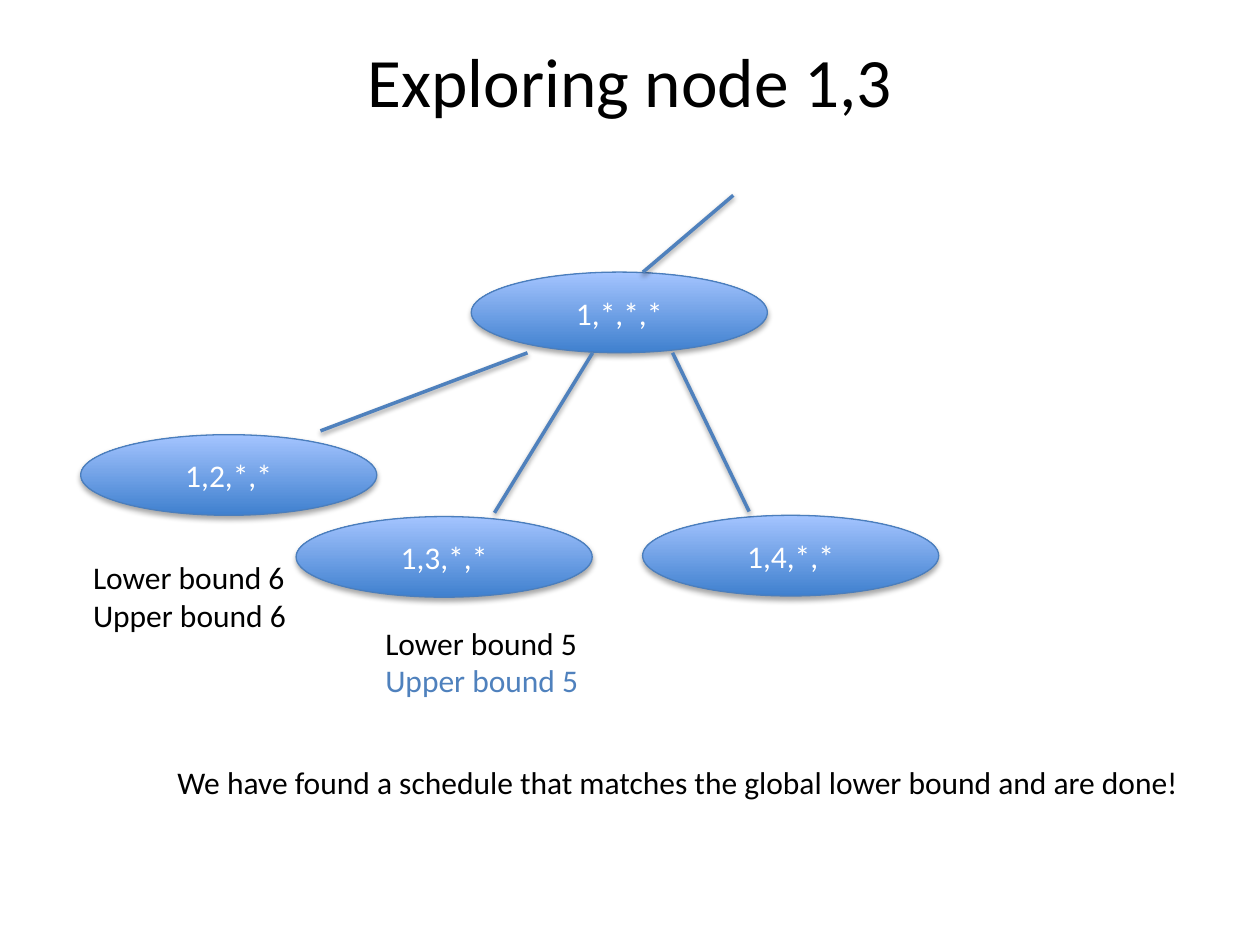
from lxml import etree
from pptx import Presentation
from pptx.dml.color import RGBColor
from pptx.enum.shapes import MSO_CONNECTOR, MSO_SHAPE
from pptx.enum.text import MSO_ANCHOR, PP_ALIGN
from pptx.oxml.ns import qn
from pptx.util import Inches, Pt

STRAIGHT = MSO_CONNECTOR.STRAIGHT
OVAL = MSO_SHAPE.OVAL
TOP, MIDDLE = MSO_ANCHOR.TOP, MSO_ANCHOR.MIDDLE
LEFT, CENTER = PP_ALIGN.LEFT, PP_ALIGN.CENTER

UNIT = 0.1
FONT = "Calibri"
BLACK, WHITE, BLUE = "000000", "FFFFFF", "4F81BD"
NODE_WIDTH, NODE_HEIGHT = 23.5, 6.4
EDGE_GAP = 0.3


def color(value):
    return RGBColor.from_string(value)


def grid(*cells):
    return [Inches(cell * UNIT) for cell in cells]


def add_shadow(shape, opacity, distance):
    properties = shape._element.spPr
    effects = properties.find(qn("a:effectLst"))
    if effects is None:
        effects = etree.SubElement(properties, qn("a:effectLst"))
    shadow = etree.SubElement(
        effects, qn("a:outerShdw"), blurRad=str(Pt(3.1)),
        dist=str(Pt(distance)), dir="5400000", rotWithShape="0")
    tint = etree.SubElement(shadow, qn("a:srgbClr"), val=BLACK)
    etree.SubElement(tint, qn("a:alpha"), val=str(opacity * 1000))


def write(shape, *lines, size=18, colors=(BLACK,), align=LEFT, anchor=TOP,
          wrap=True, top=0.05):
    frame = shape.text_frame
    frame.word_wrap = wrap
    frame.vertical_anchor = anchor
    frame.margin_top = Inches(top)
    for index, line in enumerate(lines):
        para = frame.paragraphs[0] if index == 0 else frame.add_paragraph()
        para.alignment = align
        span = para.add_run()
        span.text = line
        span.font.name = FONT
        span.font.size = Pt(size)
        span.font.color.rgb = color(colors[index % len(colors)])


def add_text(page, box, *lines, **style):
    write(page.shapes.add_textbox(*grid(*box)), *lines, **style)


def add_node(page, left, top, label):
    node = page.shapes.add_shape(OVAL, *grid(left, top, NODE_WIDTH, NODE_HEIGHT))
    node.fill.gradient()
    node.fill.gradient_angle = 90
    for stop, value in zip(node.fill.gradient_stops, ("3F80CE", "A4C4FF")):
        stop.color.rgb = color(value)
    node.line.color.rgb = color("4B7EBC")
    node.line.width = Pt(0.75)
    node.shadow.inherit = False
    add_shadow(node, 35, 1.8)
    write(node, label, colors=(WHITE,), align=CENTER, anchor=MIDDLE)


def add_edge(page, start, end):
    edge = page.shapes.add_connector(STRAIGHT, *grid(*start, *end))
    edge.line.color.rgb = color(BLUE)
    edge.line.width = Pt(2)
    add_shadow(edge, 38, 1.6)


def add_tree(page, left, top):
    root_left, root_top = left + 31, top + 6.1
    add_node(page, root_left, root_top, "1,*,*,*")
    children = [
        ("1,4,*,*", 44.6, 25.4, 0.68, 0.36),
        ("1,3,*,*", 17.1, 25.5, 0.41, 0.67),
        ("1,2,*,*", 0, 19, 0.19, 0.81),
    ]
    for label, across, down, leave, arrive in children:
        add_node(page, left + across, top + down, label)
        add_edge(page,
                 (root_left + leave * NODE_WIDTH, root_top + NODE_HEIGHT),
                 (left + across + arrive * NODE_WIDTH, top + down - EDGE_GAP))
    add_edge(page, (root_left + 0.58 * NODE_WIDTH, root_top),
             (root_left + 0.885 * NODE_WIDTH, top))


def add_bounds(page, left, top, bound, upper_color=BLACK):
    add_text(page, (left, top, 17.4, 7.1), f"Lower bound {bound}",
             f"Upper bound {bound}", colors=(BLACK, upper_color), wrap=False)


def main():
    deck = Presentation()
    deck.slide_width, deck.slide_height = grid(100, 75)
    page = deck.slides.add_slide(deck.slide_layouts[6])
    add_text(page, (5, 3, 90, 12.5), "Exploring node 1,3",
             size=39.6, align=CENTER, top=0)
    add_tree(page, 6.4, 15.5)
    add_bounds(page, 6.4, 43.8, 6)
    add_bounds(page, 29.6, 49, 5, BLUE)
    add_text(page, (13.1, 60.1, 82.6, 7.1),
             "We have found a schedule that matches the global lower bound and are done!",
             wrap=False)
    deck.save("out.pptx")


if __name__ == "__main__":
    main()
